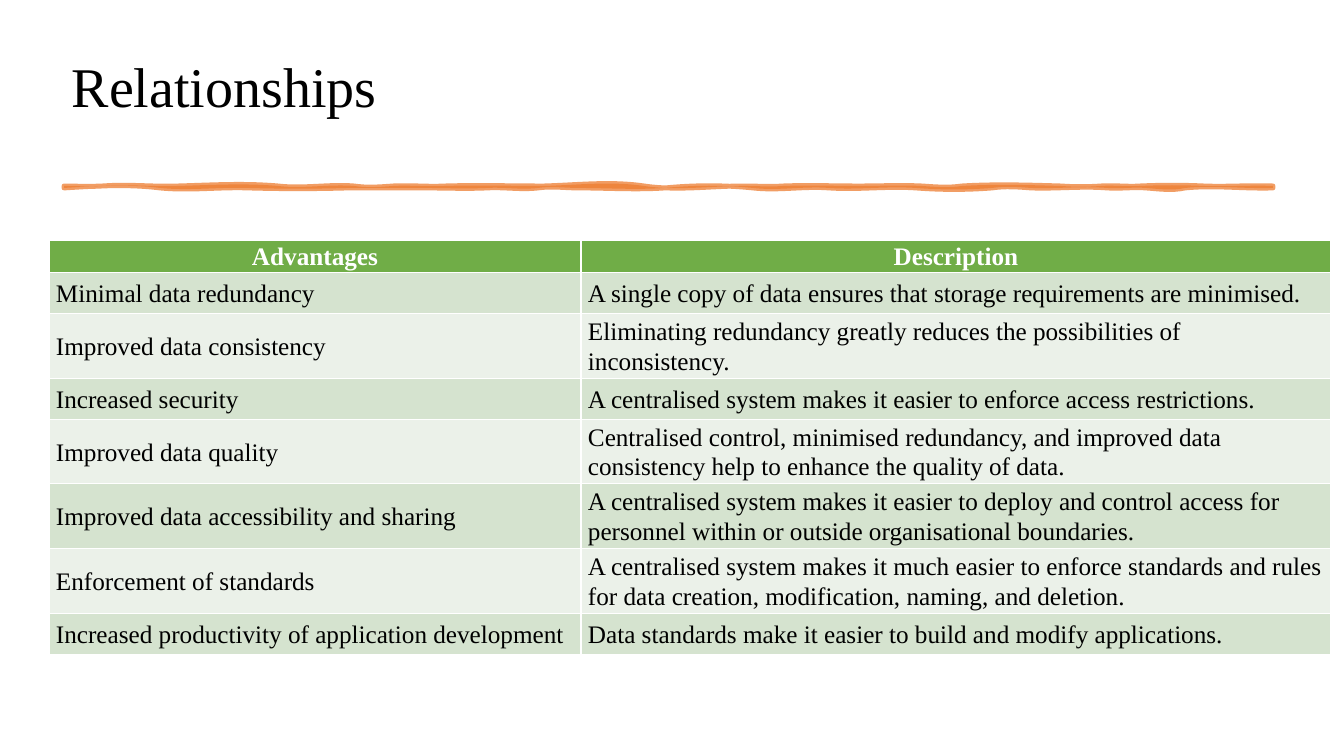
"""Build the Relationships slide with its table of advantages."""
from lxml.etree import SubElement
from pptx import Presentation
from pptx.dml.color import RGBColor
from pptx.enum.text import MSO_ANCHOR as Anchor, PP_ALIGN as Align
from pptx.oxml.ns import qn
from pptx.util import Pt

TITLE = "Relationships"
ADVANTAGES = [
    ("Advantages", "Description"),
    ("Minimal data redundancy",
     "A single copy of data ensures that storage requirements are minimised."),
    ("Improved data consistency",
     "Eliminating redundancy greatly reduces the possibilities of inconsistency."),
    ("Increased security",
     "A centralised system makes it easier to enforce access restrictions."),
    ("Improved data quality",
     "Centralised control, minimised redundancy, and improved data "
     "consistency help to enhance the quality of data."),
    ("Improved data accessibility and sharing",
     "A centralised system makes it easier to deploy and control access for "
     "personnel within or outside organisational boundaries."),
    ("Enforcement of standards",
     "A centralised system makes it much easier to enforce standards and rules "
     "for data creation, modification, naming, and deletion."),
    ("Increased productivity of application development",
     "Data standards make it easier to build and modify applications."),
]
COLUMN_WIDTHS = (532, 750)
HEADER_HEIGHT, ROW_HEIGHT = 21, 41

BRUSH_LEFT, BRUSH_TOP, BRUSH_BOTTOM = 64, 185, 187
TOP_WAVES = [
    (103, 0, 1), (178, -2, 1), (278, -1, -3), (354, 3, -2), (393, 2, 1),
    (445, -1, 1), (544, -1, 0), (644, -1, -5), (744, 5, 0), (783, 0, 1),
    (859, -1, 0), (922, 0, -1), (962, 1, 2), (1061, -2, -1), (1101, 1, 1),
    (1140, -1, 1), (1204, -1, -1), (1273, 1, -1),
]
BOTTOM_WAVES = [
    (1273, 0, 0), (1185, 1, -3), (1146, 3, 1), (1107, -1, 1), (1031, -2, 1),
    (992, -1, -2), (916, 2, 2), (829, -2, 2), (753, -2, 3), (665, -3, -3),
    (578, 2, 0), (538, 0, -2), (487, 2, -1), (423, 1, 0), (348, 0, 0),
    (248, 1, 1), (160, -1, 3), (64, -4, -2),
]

FONT = "Times New Roman"
BLACK, WHITE, ORANGE = "000000", "FFFFFF", "ED7D31"
HEADER_GREEN, BANDS = "70AD47", ("EBF1E9", "D5E3CF")


def px(length):
    return round(length * 914400 / 100.8)


def color(code):
    return RGBColor.from_string(code)


def write(frame, text, size, ink, spacing, bold=False):
    frame.text = text
    paragraph = frame.paragraphs[0]
    paragraph.line_spacing = spacing
    font = paragraph.runs[0].font
    font.name, font.size, font.bold = FONT, Pt(size), bold
    font.color.rgb = color(ink)
    return paragraph


def wave_curves():
    curves, start = [], BRUSH_LEFT
    for base, waves in ((BRUSH_TOP, TOP_WAVES), (BRUSH_BOTTOM, BOTTOM_WAVES)):
        for end, first, second in waves:
            third = (end - start) / 3
            curves.append(((start + third, base + first),
                           (end - third, base + second), (end, base)))
            start = end
    return curves


def add_brush(slide):
    curves = wave_curves()
    builder = slide.shapes.build_freeform(px(BRUSH_LEFT), px(BRUSH_TOP))
    builder.add_line_segments(
        [(px(x), px(y)) for *_, (x, y) in curves], close=True)
    brush = builder.convert_to_shape()
    for segment, curve in zip(list(brush.element.iter(qn("a:lnTo"))), curves):
        bend = SubElement(segment.getparent(), qn("a:cubicBezTo"))
        segment.getparent().replace(segment, bend)
        for x, y in curve:
            SubElement(bend, qn("a:pt"), x=str(px(x - BRUSH_LEFT)),
                       y=str(px(y - BRUSH_TOP)))
    brush.shadow.inherit = False
    brush.line.width = Pt(3.5)
    for paint in (brush.fill, brush.line.fill):
        paint.solid()
        paint.fore_color.rgb = color(ORANGE)
    for tint in brush.element.spPr.iter(qn("a:srgbClr")):
        SubElement(tint, qn("a:alpha"), val="75000")
    SubElement(brush.element.spPr.find(qn("a:ln")), qn("a:round"))
    brush.top = px(BRUSH_TOP + 1)


def add_advantages(slide):
    height = HEADER_HEIGHT + ROW_HEIGHT * (len(ADVANTAGES) - 1)
    table = slide.shapes.add_table(
        len(ADVANTAGES), len(COLUMN_WIDTHS), px(49), px(240),
        px(sum(COLUMN_WIDTHS)), px(height)).table
    for column, width in zip(table.columns, COLUMN_WIDTHS):
        column.width = px(width)
    for index, texts in enumerate(ADVANTAGES):
        header = index == 0
        table.rows[index].height = px(HEADER_HEIGHT if header else ROW_HEIGHT)
        for cell, text in zip(table.rows[index].cells, texts):
            paragraph = write(cell.text_frame, text, 18,
                              WHITE if header else BLACK, 1.07, header)
            paragraph.space_before = Pt(12)
            paragraph.alignment = Align.CENTER if header else Align.LEFT
            cell.vertical_anchor = Anchor.MIDDLE
            cell.margin_left = cell.margin_right = px(7)
            cell.margin_top = cell.margin_bottom = 0
            cell.fill.solid()
            cell.fill.fore_color.rgb = color(
                HEADER_GREEN if header else BANDS[index % 2])


def main():
    deck = Presentation()
    deck.slide_width, deck.slide_height = px(1344), px(756)
    slide = deck.slides.add_slide(deck.slide_layouts[6])
    title = slide.shapes.add_textbox(px(62), px(10), px(1238), px(158)).text_frame
    title.word_wrap = True
    title.vertical_anchor = Anchor.MIDDLE
    write(title, TITLE, 40, BLACK, 0.9)
    add_brush(slide)
    add_advantages(slide)
    deck.save("out.pptx")


if __name__ == "__main__":
    main()
